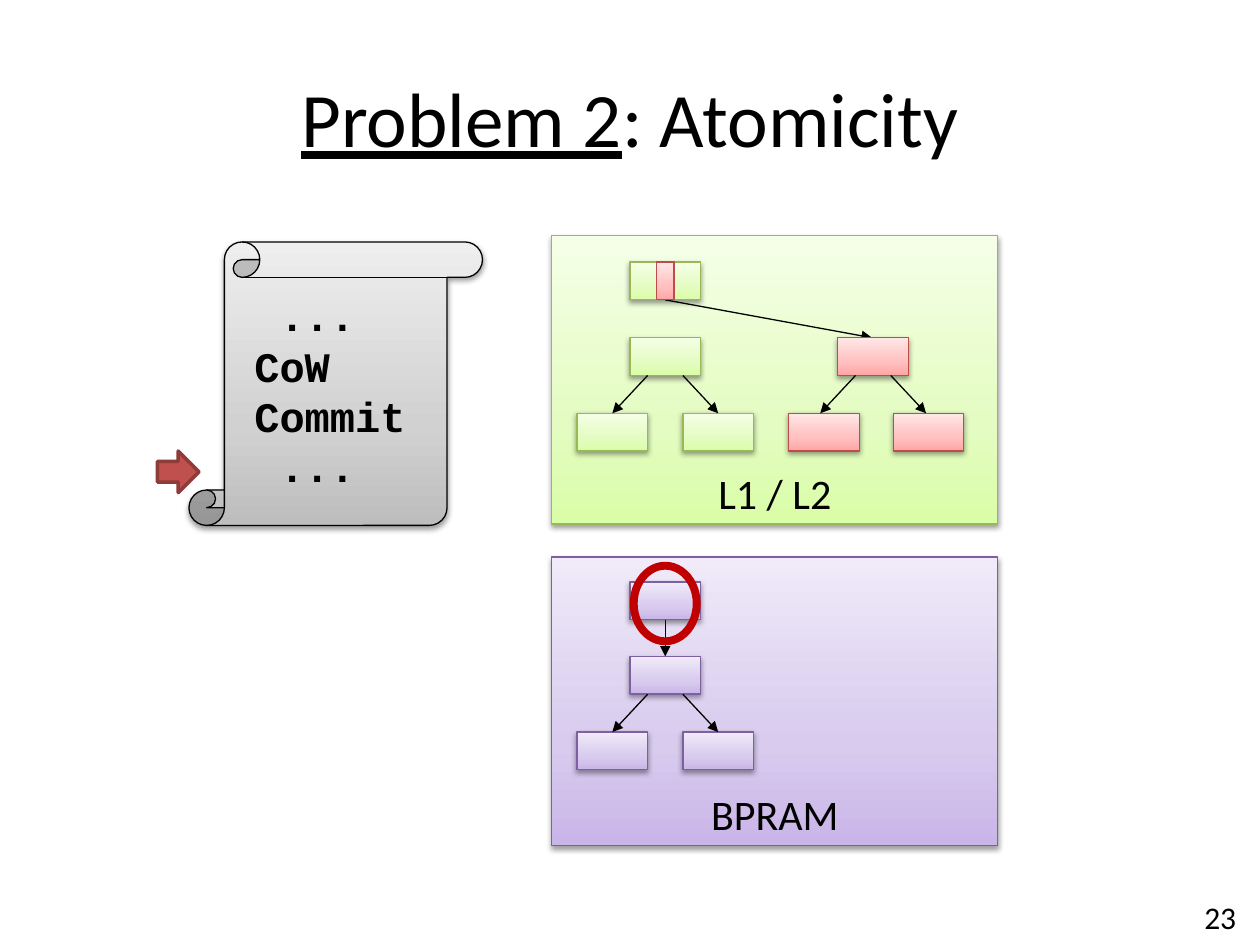
from lxml import etree
from pptx import Presentation
from pptx.dml.color import RGBColor
from pptx.enum.shapes import MSO_CONNECTOR, MSO_SHAPE as SHAPE
from pptx.enum.text import MSO_ANCHOR as ANCHOR, MSO_AUTO_SIZE as AUTO, PP_ALIGN as ALIGN
from pptx.oxml.ns import qn
from pptx.util import Inches, Pt

BLACK = "000000"
# Gradient stops at 0, 35 and 100 %, then the outline
GREY = ("BDBDBD", "D1D1D1", "EEEEEE", BLACK)
GREEN = ("DAFDA7", "E4FCC2", "F5FFE7", "98B955")
PURPLE = ("C9B5E8", "D8CBEE", "F0EAF9", "7D60A0")
RED = ("FFA6A5", "FFC0BF", "FFE7E7", "BF4C48")
NODE_W, NODE_H = 0.56, 0.3

prs = Presentation()
prs.slide_width, prs.slide_height = Inches(10), Inches(7.5)
slide = prs.slides.add_slide(prs.slide_layouts[5])


def add_block(kind, box, colours, shadow=True):
    """Add a shape with an upward gradient and, if wanted, a soft shadow."""
    block = slide.shapes.add_shape(kind, *map(Inches, box))
    block.fill.gradient()
    grad = block._element.spPr.find(qn("a:gradFill"))
    stops = grad.find(qn("a:gsLst"))
    for stop in list(stops):
        stops.remove(stop)
    for position, colour in zip((0, 35, 100), colours):
        stop = etree.SubElement(stops, qn("a:gs"), pos=str(position * 1000))
        etree.SubElement(stop, qn("a:srgbClr"), val=colour)
    grad.find(qn("a:lin")).set("ang", str(270 * 60000))
    block.line.color.rgb = RGBColor.from_string(colours[3])
    block.line.width = Pt(0.75)
    block.shadow.inherit = False
    if shadow:
        effects = block._element.spPr.find(qn("a:effectLst"))
        outer = etree.SubElement(effects, qn("a:outerShdw"), blurRad=str(Pt(3.1)),
                                 dist=str(Pt(1.6)), dir="5400000", rotWithShape="0")
        colour = etree.SubElement(outer, qn("a:srgbClr"), val=BLACK)
        etree.SubElement(colour, qn("a:alpha"), val="38000")
    return block


def add_arrow(*ends):
    arrow = slide.shapes.add_connector(MSO_CONNECTOR.STRAIGHT, *map(Inches, ends))
    arrow.line.color.rgb = RGBColor.from_string(BLACK)
    arrow.line.width = Pt(0.75)
    properties = arrow._element.spPr
    etree.SubElement(properties.find(qn("a:ln")), qn("a:tailEnd"), type="triangle")
    etree.SubElement(properties, qn("a:effectLst"))


# Title
title = slide.shapes.title
title.left, title.top, title.width, title.height = map(Inches, (0.5, 0.3, 9, 1.25))

# Scroll with the log, and the two memory panels
add_block(SHAPE.VERTICAL_SCROLL, (1.5, 1.92, 2.33, 2.25), GREY)
log = slide.shapes.add_textbox(*map(Inches, (1.92, 2.25, 1.41, 1.72)))
cache = add_block(SHAPE.RECTANGLE, (4.38, 1.87, 3.54, 2.29), GREEN)
memory = add_block(SHAPE.RECTANGLE, (4.38, 4.42, 3.54, 2.29), PURPLE)

# Marker of the current log entry
marker = slide.shapes.add_shape(SHAPE.RIGHT_ARROW, *map(Inches, (1.25, 3.58, 0.33, 0.33)))
marker.shadow.inherit = False
marker.fill.solid()
marker.fill.fore_color.rgb = RGBColor.from_string("C0504D")
marker.line.color.rgb = RGBColor.from_string("8E3B39")
marker.line.width = Pt(2)

# Root nodes and their pointers
for top, colours in ((2.08, GREEN), (4.62, PURPLE)):
    add_block(SHAPE.RECTANGLE, (5, top, NODE_W, NODE_H), colours)
add_arrow(5.28, 4.92, 5.28, 5.21)
add_arrow(5.28, 2.38, 6.92, 2.68)
for height in (0.17, NODE_H):
    add_block(SHAPE.RECTANGLE, (5.21, 2.08, 0.14, height), RED, shadow=False)

# Subtrees: parent position, left positions of the two leaves
subtrees = [
    (5, 2.68, (4.58, 5.42), GREEN),
    (6.65, 2.68, (6.26, 7.09), RED),
    (5, 5.21, (4.58, 5.42), PURPLE),
]
for parent_left, parent_top, leaf_lefts, colours in subtrees:
    leaf_top = parent_top + 2 * NODE_H
    for leaf_left in leaf_lefts:
        add_block(SHAPE.RECTANGLE, (leaf_left, leaf_top, NODE_W, NODE_H), colours)
    add_block(SHAPE.RECTANGLE, (parent_left, parent_top, NODE_W, NODE_H), colours)
    centre = parent_left + NODE_W / 2
    for side in (-1, 1):
        add_arrow(centre + side * 0.14, parent_top + NODE_H, centre + side * 0.42, leaf_top)

# Slide number, and the ring around the old root
number = slide.shapes.add_textbox(*map(Inches, (7.58, 7.08, 2.33, 0.4)))
ring = slide.shapes.add_shape(SHAPE.OVAL, *map(Inches, (5.03, 4.49, 0.5, 0.6)))
ring.shadow.inherit = False
ring.fill.background()
ring.line.color.rgb = RGBColor.from_string("C00000")
ring.line.width = Pt(4.5)

# Texts: each line is a list of runs
heading = {"name": "Calibri", "size": Pt(44)}
label = {"name": "Calibri", "size": Pt(24)}
code = {"name": "Courier New", "size": Pt(24), "bold": True}
page = {"name": "Calibri", "size": Pt(18)}
texts = [
    (title, [["Problem 2", ": Atomicity"]], ALIGN.CENTER, ANCHOR.MIDDLE, heading),
    (log, [[" ..."], ["CoW"], ["Commit"], [" ..."]], ALIGN.LEFT, ANCHOR.TOP, code),
    (cache, [["L1 / L2"]], ALIGN.CENTER, ANCHOR.BOTTOM, label),
    (memory, [["BPRAM"]], ALIGN.CENTER, ANCHOR.BOTTOM, label),
    (number, [["23"]], ALIGN.RIGHT, ANCHOR.TOP, page),
]
for holder, lines, alignment, anchor, font_format in texts:
    frame = holder.text_frame
    frame.word_wrap = holder is not log
    frame.vertical_anchor = anchor
    for index, line in enumerate(lines):
        paragraph = frame.add_paragraph() if index else frame.paragraphs[0]
        paragraph.alignment = alignment
        for words in line:
            run = paragraph.add_run()
            run.text = words
            run.font.color.rgb = RGBColor.from_string(BLACK)
            for attribute, value in font_format.items():
                setattr(run.font, attribute, value)
log.text_frame.auto_size = AUTO.SHAPE_TO_FIT_TEXT
title.text_frame.paragraphs[0].runs[0].font.underline = True

prs.save("out.pptx")
